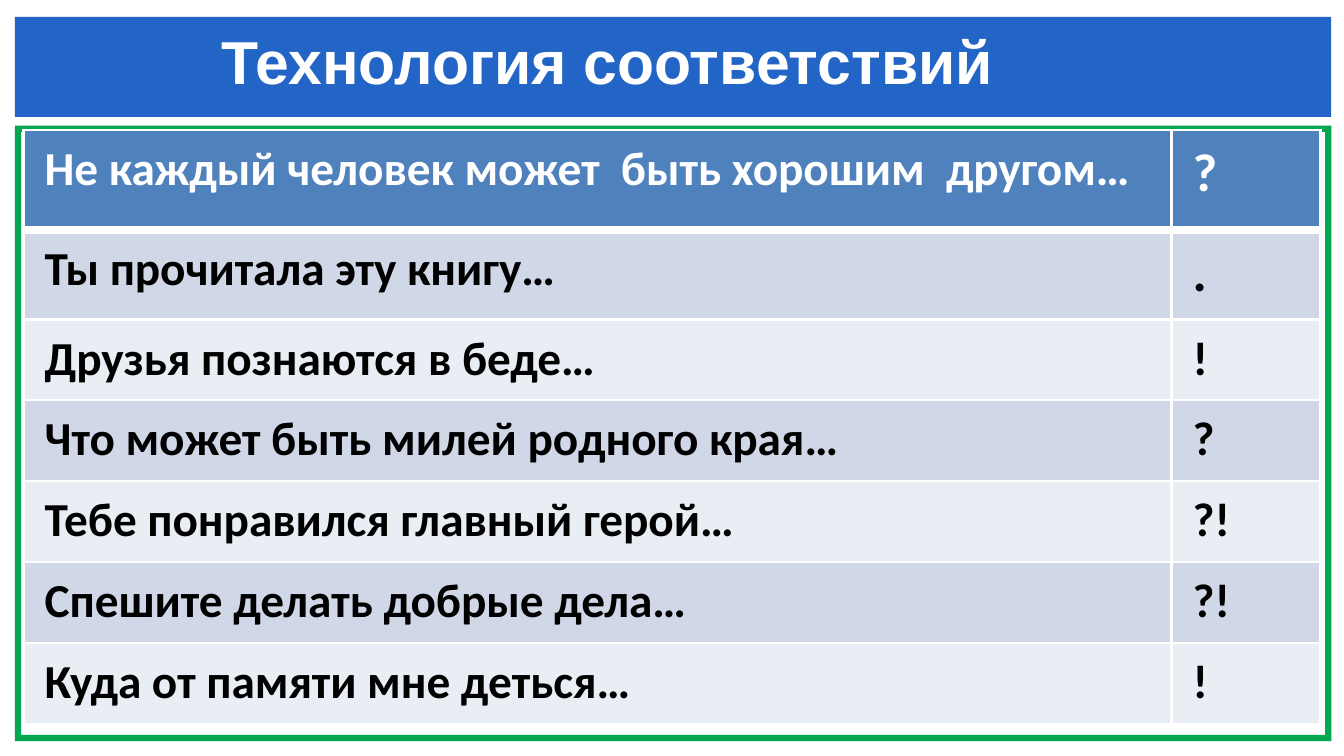
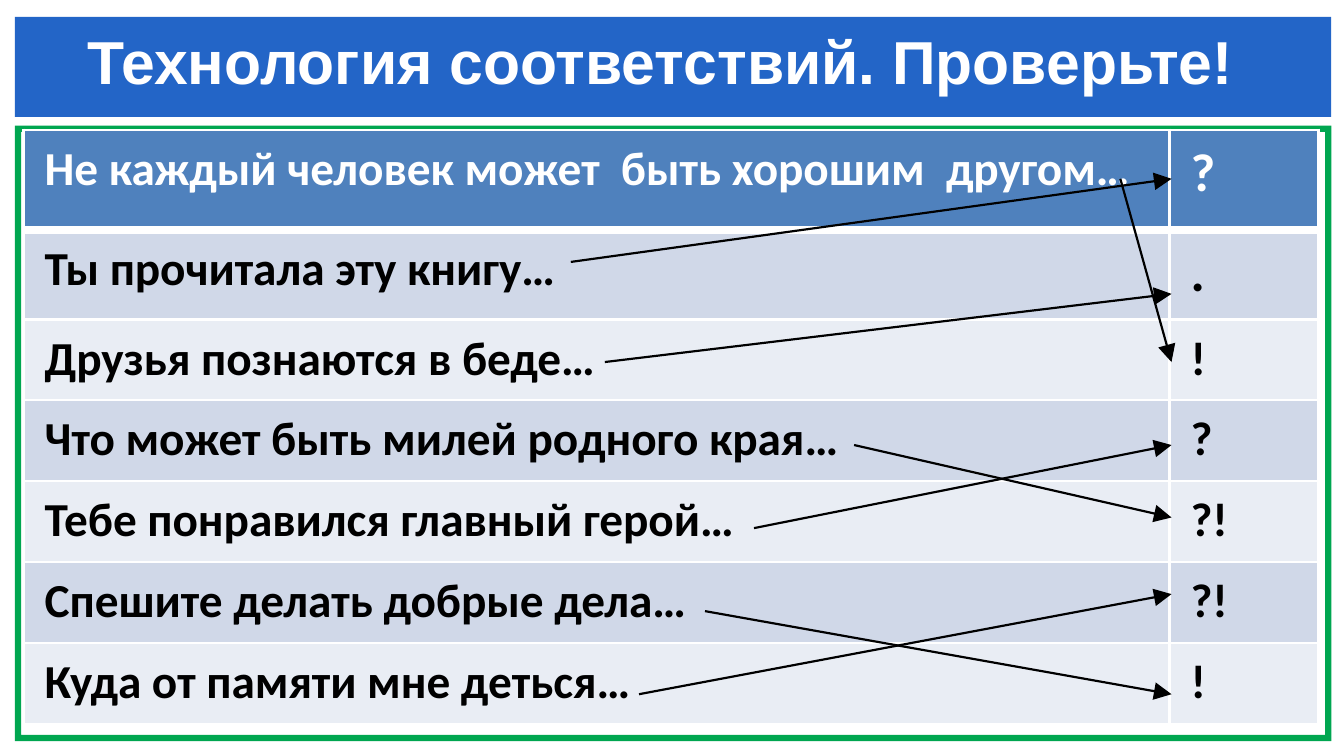
"""Builds two slides on matching sentences with their closing marks."""
from lxml.etree import SubElement as Sub
from pptx import Presentation
from pptx.dml.color import RGBColor as Rgb
from pptx.enum.shapes import MSO_CONNECTOR as Link, MSO_SHAPE as Shape
from pptx.enum.text import MSO_ANCHOR as Anchor, MSO_AUTO_SIZE as Fit, PP_ALIGN as Align
from pptx.oxml.ns import qn
from pptx.util import Inches, Pt

WHITE = Rgb(0xFF, 0xFF, 0xFF)
BLACK = Rgb(0x00, 0x00, 0x00)
GREEN = Rgb(0x00, 0xA6, 0x50)
BLUE = Rgb(0x23, 0x65, 0xC7)
HEAD = Rgb(0x4F, 0x81, 0xBD)
DARK = Rgb(0xD0, 0xD8, 0xE8)
LIGHT = Rgb(0xE9, 0xED, 0xF4)

PAIRS = [
    ("Не каждый человек может  быть хорошим  другом…", "?"),
    ("Ты прочитала эту книгу…", "."),
    ("Друзья познаются в беде…", "!"),
    ("Что может быть милей родного края…", "?"),
    ("Тебе понравился главный герой…", "?!"),
    ("Спешите делать добрые дела…", "?!"),
    ("Куда от памяти мне деться…", "!"),
]
ROWS = [0.47, 0.42] + [0.38] * 5
STARTS = [(5.26, 0.84), (2.68, 1.23), (2.84, 1.7), (4.01, 2.09),
          (3.54, 2.48), (3.31, 2.87), (3, 3.26)]
ENDS = [0.84, 1.38, 1.7, 2.09, 2.43, 2.79, 3.26]
KEY = [2, 0, 1, 4, 3, 6, 5]


def write(frame, text, font="Calibri", size=16, color=BLACK):
    """Puts bold left-aligned text into a text frame."""
    par = frame.paragraphs[0]
    par.alignment = Align.LEFT
    run = par.add_run()
    run.text = text
    run.font.name = font
    run.font.size = Pt(size)
    run.font.bold = True
    run.font.color.rgb = color


class Deck:
    """Holds the style and the current slide."""

    def __init__(self, wide, high):
        """Starts a deck with a bare title-only layout."""
        self.file = Presentation()
        self.file.slide_width = Inches(wide)
        self.file.slide_height = Inches(high)
        self.base = self.file.slide_layouts[5]
        for item in list(self.base.placeholders)[1:]:
            item.element.getparent().remove(item.element)
        self.slide = None

    def page(self, text, inset):
        """Adds a slide with its title set in from the left."""
        self.slide = self.file.slides.add_slide(self.base)
        title = self.slide.shapes.title
        title.left, title.top = Inches(0.33), Inches(0.11)
        title.width, title.height = Inches(5.65), Inches(0.35)
        frame = title.text_frame
        frame.margin_left = Inches(inset)
        frame.margin_top = frame.margin_right = frame.margin_bottom = 0
        frame.vertical_anchor = Anchor.TOP
        frame.auto_size = Fit.NONE
        write(frame, text, font="Arial", size=20.5, color=WHITE)

    def share(self, kind, top, high, color):
        """Draws a full-width shape and hands it to the layout."""
        shape = self.slide.shapes.add_shape(
            kind, Inches(0.07), Inches(top), Inches(6.18), Inches(high))
        shape.shadow.inherit = False
        shape.fill.solid()
        shape.fill.fore_color.rgb = color
        shape.line.fill.background()
        self.base.shapes.element.append(shape.element)
        return shape

    def edges(self, cell, top, base):
        """Draws the white borders of a cell."""
        props = cell._tc.get_or_add_tcPr()
        for side, width in (("L", 1), ("R", 1), ("T", top), ("B", base)):
            line = Sub(props, qn("a:ln" + side), w=str(Pt(width)))
            Sub(Sub(line, qn("a:solidFill")), qn("a:srgbClr"), val=str(WHITE))

    def table(self, first):
        """Adds the table of sentences and marks."""
        cols = [first, 0.7]
        grid = self.slide.shapes.add_table(
            len(ROWS), len(cols), Inches(0.11), Inches(0.61),
            Inches(sum(cols)), Inches(sum(ROWS))).table
        grid.horz_banding = False
        for col, wide in zip(grid.columns, cols):
            col.width = Inches(wide)
        for row, high in enumerate(ROWS):
            grid.rows[row].height = Inches(high)
            for col, text in enumerate(PAIRS[row]):
                cell = grid.cell(row, col)
                self.edges(cell, 3 if row == 1 else 1, 1 if row else 3)
                cell.fill.solid()
                cell.fill.fore_color.rgb = (DARK if row % 2 else LIGHT) if row else HEAD
                write(cell.text_frame, text, size=18 if col and row < 2 else 16,
                      color=BLACK if row else WHITE)

    def arrow(self, start, end):
        """Adds a thin arrow between two points."""
        line = self.slide.shapes.add_connector(
            Link.STRAIGHT, *map(Inches, start + end))
        line.line.color.rgb = BLACK
        line.line.width = Pt(0.75)
        props = line.element.spPr
        Sub(props.find(qn("a:ln")), qn("a:tailEnd"), type="triangle")
        Sub(props, qn("a:effectLst"))


def main():
    """Builds the task and its answer."""
    deck = Deck(6.31, 3.55)
    deck.page("Технология соответствий", 0.71)
    frame = deck.share(Shape.FRAME, 0.59, 2.89, GREEN)
    frame.adjustments[0] = 0.01
    deck.share(Shape.RECTANGLE, 0.08, 0.47, BLUE)
    deck.table(5.39)

    deck.page("Технология соответствий. Проверьте!", 0.08)
    deck.table(5.38)
    for start, goal in zip(STARTS, KEY):
        deck.arrow(start, (5.5, ENDS[goal]))
    deck.file.save("out.pptx")


if __name__ == "__main__":
    main()
